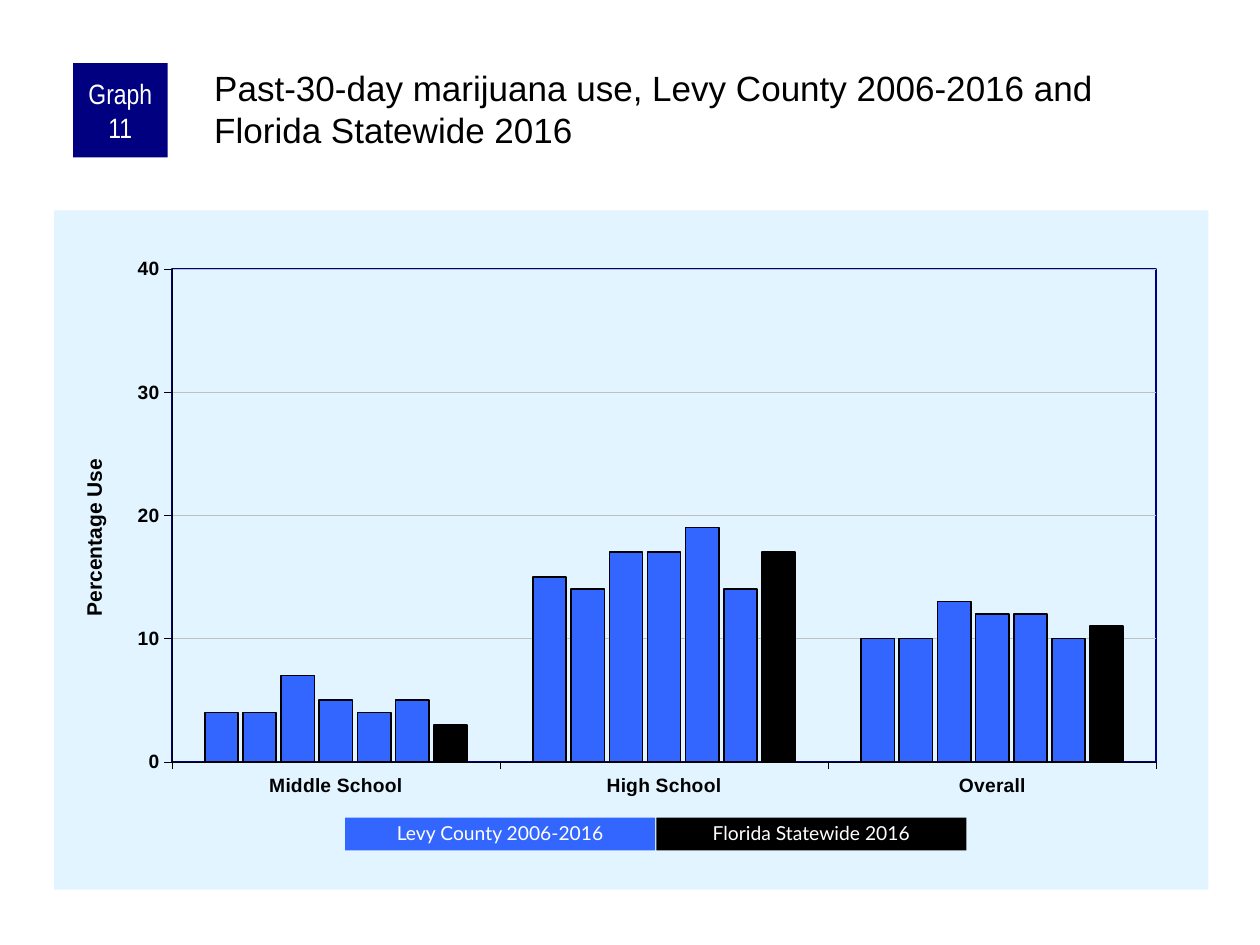
from pptx import Presentation
from pptx.chart.data import CategoryChartData
from pptx.dml.color import RGBColor
from pptx.enum.chart import XL_CHART_TYPE, XL_TICK_MARK
from pptx.enum.shapes import MSO_SHAPE
from pptx.enum.text import MSO_ANCHOR, MSO_AUTO_SIZE, PP_ALIGN
from pptx.oxml import parse_xml
from pptx.oxml.ns import nsdecls, qn
from pptx.util import Inches, Pt

NAVY = RGBColor(0x00, 0x00, 0x80)
BLUE = RGBColor(0x33, 0x66, 0xFF)
BLACK = RGBColor(0x00, 0x00, 0x00)
WHITE = RGBColor(0xFF, 0xFF, 0xFF)
GREY = RGBColor(0xC0, 0xC0, 0xC0)
PALE = RGBColor(0xE1, 0xF4, 0xFF)


def add_box(slide, words, left, top, width, height, fill, font, size):
    """Add a filled rectangle with centred white text."""
    box = slide.shapes.add_shape(MSO_SHAPE.RECTANGLE, Inches(left), Inches(top),
                                 Inches(width), Inches(height))
    box.shadow.inherit = False
    box.fill.solid()
    box.fill.fore_color.rgb = fill
    box.line.fill.background()
    frame = box.text_frame
    frame.word_wrap = True
    frame.vertical_anchor = MSO_ANCHOR.MIDDLE
    frame.margin_left = frame.margin_right = Inches(0.05)
    frame.margin_top = frame.margin_bottom = 0
    para = frame.paragraphs[0]
    para.alignment = PP_ALIGN.CENTER
    run = para.add_run()
    run.text = words
    run.font.name = font
    run.font.size = Pt(size)
    run.font.color.rgb = WHITE
    return para


def set_layout(part, index, **spots):
    """Fix the place of a chart part, as fractions of the chart."""
    for old in part.findall(qn("c:layout")):
        part.remove(old)
    inner = '<c:layoutTarget val="inner"/>' if "w" in spots else ""
    modes = '<c:xMode val="edge"/><c:yMode val="edge"/>'
    sizes = "".join(f'<c:{key} val="{val}"/>' for key, val in spots.items())
    part.insert(index, parse_xml(
        f'<c:layout {nsdecls("c")}><c:manualLayout>{inner}{modes}{sizes}'
        '</c:manualLayout></c:layout>'))


deck = Presentation()
deck.slide_width, deck.slide_height = Inches(10), Inches(7.5)
slide = deck.slides.add_slide(deck.slide_layouts[5])

# Title
title = slide.shapes.title
title.left, title.top = Inches(1.67), Inches(0.5)
title.width, title.height = Inches(7.92), Inches(0.83)
frame = title.text_frame
frame.auto_size = MSO_AUTO_SIZE.NONE
frame.word_wrap = True
frame.vertical_anchor = MSO_ANCHOR.TOP
frame.margin_left = frame.margin_top = Inches(0.03)
frame.margin_right = frame.margin_bottom = 0
para = frame.paragraphs[0]
para.alignment = PP_ALIGN.LEFT
run = para.add_run()
run.text = "Past-30-day marijuana use, Levy County 2006-2016 and Florida Statewide 2016"
run.font.name = "Arial"
run.font.size = Pt(20)
run.font.color.rgb = BLACK

# Chart: six county surveys, then the state
data = CategoryChartData()
data.categories = ["Middle School", "High School", "Overall"]
rates = [(4, 15, 10), (4, 14, 10), (7, 17, 13), (5, 17, 12),
         (4, 19, 12), (5, 14, 10), (3, 17, 11)]
for num, vals in enumerate(rates, 1):
    data.add_series(f"Series {num}", vals)
chart = slide.shapes.add_chart(
    XL_CHART_TYPE.COLUMN_CLUSTERED, Inches(0.43), Inches(1.67),
    Inches(9.16), Inches(5.39), data).chart
chart.has_legend = False
chart.has_title = False
chart.font.name = "Arial"
chart.font.size = Pt(8)
chart.font.color.rgb = BLACK

# Bars
plot = chart.plots[0]
plot.vary_by_categories = False
plot.gap_width = 200
plot.overlap = -15
for num, bars in enumerate(plot.series, 1):
    bars.format.fill.solid()
    bars.format.fill.fore_color.rgb = BLACK if num == len(rates) else BLUE
    bars.format.line.color.rgb = BLACK
    bars.format.line.width = Pt(1)

# Axes
for axis in (chart.category_axis, chart.value_axis):
    axis.major_tick_mark = XL_TICK_MARK.OUTSIDE
    axis.minor_tick_mark = XL_TICK_MARK.NONE
    axis.format.line.color.rgb = BLACK
    axis.format.line.width = Pt(0.25)
    font = axis.tick_labels.font
    font.name, font.size, font.bold = "Arial", Pt(11), True
    font.color.rgb = BLACK
axis = chart.value_axis
axis.minimum_scale, axis.maximum_scale, axis.major_unit = 0, 40, 10
axis.major_gridlines.format.line.color.rgb = GREY
axis.major_gridlines.format.line.width = Pt(0.25)
run = axis.axis_title.text_frame.paragraphs[0].add_run()
run.text = "Percentage Use"
run.font.name, run.font.size, run.font.bold = "Arial", Pt(12), True
run.font.color.rgb = BLACK
set_layout(axis.axis_title._element, 1, x=0.02, y=0.36)

# Chart background and plot frame
area = chart._chartSpace.chart.plotArea
set_layout(area, 0, x=0.102, y=0.086, w=0.853, h=0.726)
area.append(parse_xml(
    f'<c:spPr {nsdecls("c", "a")}><a:noFill/><a:ln w="12700"><a:solidFill>'
    f'<a:srgbClr val="{NAVY}"/></a:solidFill></a:ln></c:spPr>'))
chart._chartSpace.chart.addnext(parse_xml(
    f'<c:spPr {nsdecls("c", "a")}><a:solidFill><a:srgbClr val="{PALE}"/>'
    '</a:solidFill><a:ln><a:noFill/></a:ln></c:spPr>'))

# Graph number
add_box(slide, "Graph 11", 0.58, 0.5, 0.75, 0.75, NAVY, "Arial Narrow", 16)

# Legend keys
keys = [("Levy County 2006-2016", BLUE), ("Florida Statewide 2016", BLACK)]
for num, (words, fill) in enumerate(keys):
    para = add_box(slide, words, 2.74 + num * 2.47, 6.49, 2.46, 0.26,
                   fill, "Lato", 11)
    para.line_spacing = 0.9

deck.save("out.pptx")
